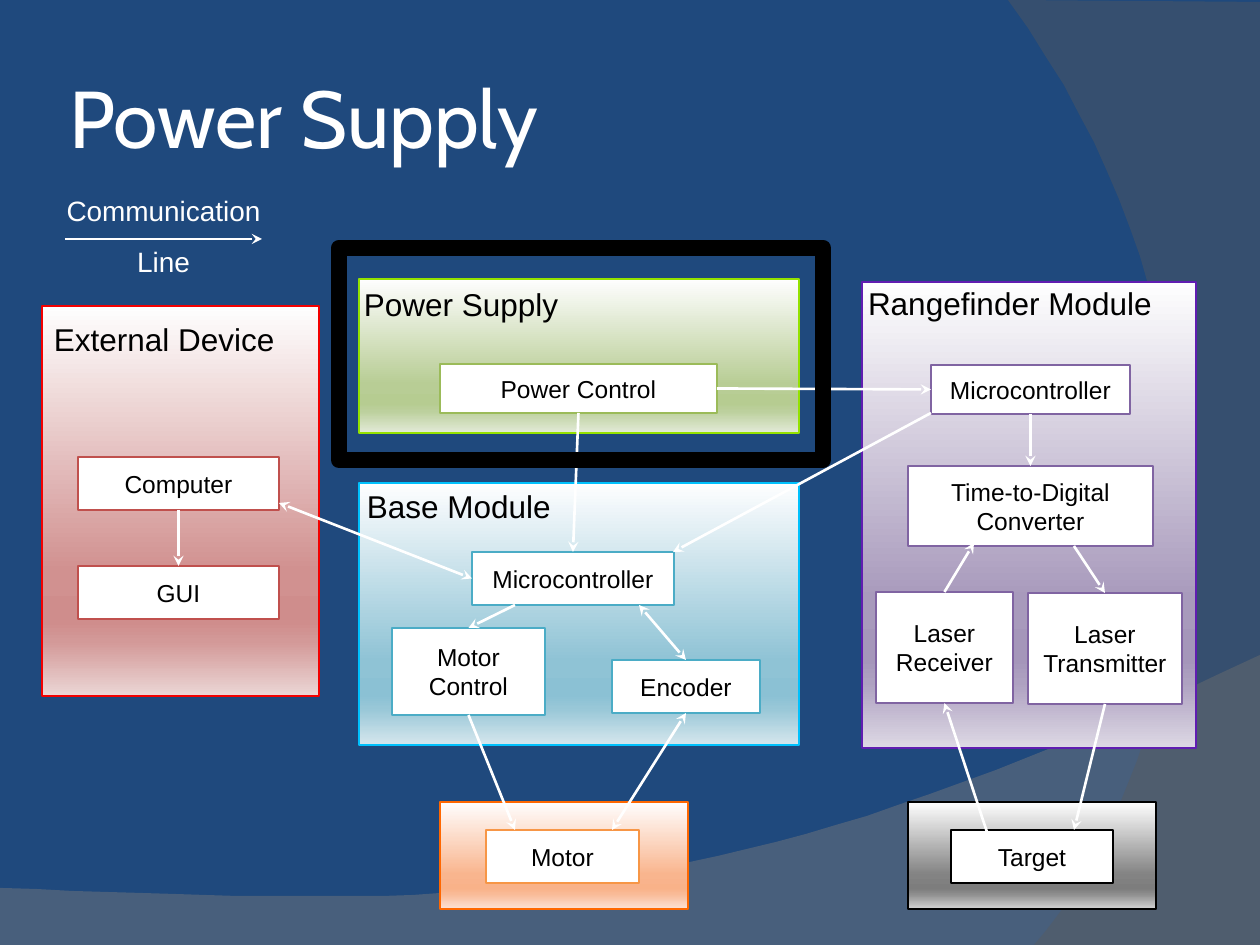
from lxml import etree
from pptx import Presentation
from pptx import util as u
from pptx.dml.color import RGBColor
from pptx.enum import shapes, text
from pptx.oxml import ns

PX = u.Inches(1) / 126
WHITE = RGBColor(0xFF, 0xFF, 0xFF)
BLACK = RGBColor(0x00, 0x00, 0x00)
NAVY = RGBColor(0x1F, 0x49, 0x7D)
LOWER_GRAY = RGBColor(0x7B, 0x7B, 0x7B)
RIGHT_GRAY = RGBColor(0x5A, 0x5A, 0x5A)
PURPLE = RGBColor(0x80, 0x64, 0xA2)
ORANGE = RGBColor(0xF7, 0x96, 0x46)
RED = RGBColor(0xC0, 0x50, 0x4D)
GREEN = RGBColor(0x9B, 0xBB, 0x59)
TEAL = RGBColor(0x4B, 0xAC, 0xC6)
PURPLE_EDGE = RGBColor(0x60, 0x1D, 0xB1)
ORANGE_EDGE = RGBColor(0xFF, 0x67, 0x00)
RED_EDGE = RGBColor(0xF3, 0x00, 0x00)
GREEN_EDGE = RGBColor(0x94, 0xE2, 0x00)
TEAL_EDGE = RGBColor(0x00, 0xC1, 0xFD)

STOPS = (0, 68, 81, 86, 100)
PURPLE_FADE = "FEFEFE A89ABC A596BA AEA1C1 DDD8E4"
ORANGE_FADE = "FFFEFE F9B58E F9B289 F9BA96 FCE1D5"
GRAY_FADE = "FEFEFE 838383 7D7D7D 8D8D8D D2D2D2"
RED_FADE = "FEFEFE D19190 CF8D8C D39998 EBD6D5"
GREEN_FADE = "FEFEFE B8CD95 B6CC91 BCD09D E2EAD7"
TEAL_FADE = "FEFEFF 8FC3D5 8BC1D4 98C7D7 D5E6ED"

PANELS = [
    ("Rangefinder Module", (862, 282, 334, 466), PURPLE_FADE, PURPLE_EDGE, (6, 2)),
    ("", (440, 802, 248, 107), ORANGE_FADE, ORANGE_EDGE, (0, 0)),
    ("", (908, 802, 248, 107), GRAY_FADE, BLACK, (0, 0)),
    ("External Device", (42, 306, 277, 390), RED_FADE, RED_EDGE, (12, 14)),
    ("Power Supply", (359, 279, 440, 154), GREEN_FADE, GREEN_EDGE, (5, 6)),
    ("Base Module", (359, 483, 440, 262), TEAL_FADE, TEAL_EDGE, (8, 4)),
]
BOXES = {
    "computer": ("Computer", (78, 457, 201, 53), RED),
    "gui": ("GUI", (78, 566, 201, 53), RED),
    "power": ("Power Control", (440, 364, 277, 49), GREEN),
    "base": ("Microcontroller", (472, 552, 202, 53), TEAL),
    "control": ("Motor\nControl", (392, 628, 153, 87), TEAL),
    "encoder": ("Encoder", (612, 660, 148, 53), TEAL),
    "motor": ("Motor", (486, 830, 153, 53), ORANGE),
    "ranger": ("Microcontroller", (931, 365, 199, 49), PURPLE),
    "converter": ("Time-to-Digital\nConverter", (908, 466, 245, 80), PURPLE),
    "receiver": ("Laser\nReceiver", (876, 592, 137, 111), PURPLE),
    "transmitter": ("Laser\nTransmitter", (1028, 593, 154, 111), PURPLE),
    "target": ("Target", (951, 830, 162, 53), BLACK),
}
LINKS = [
    ((65, 239), (262, 239), False),
    (("computer", 2), ("gui", 0), False),
    (("power", 2), ("base", 0), False),
    ((515, 605), ("control", 0), False),
    (("control", 2), (515, 830), False),
    (("power", 3), ("ranger", 1), False),
    (("ranger", 2), ("converter", 0), False),
    (("receiver", 0), (974, 543), False),
    ((1074, 546), ("transmitter", 0), False),
    (("transmitter", 2), (1074, 830), False),
    ((987, 832), ("receiver", 2), False),
    ((279, 503), ("base", 1), True),
    ((931, 413), (673, 552), False),
    ((639, 605), ("encoder", 0), True),
    (("encoder", 2), (612, 830), True),
]


def px(*values):
    return [u.Emu(round(value * PX)) for value in values]


def assign(target, **values):
    for name, value in values.items():
        setattr(target, name, value)


def write(box, words, size, color, align, inset=(0, 0), anchor=text.MSO_ANCHOR.MIDDLE, font="Arial"):
    frame = box.text_frame
    left, top = px(*inset)
    assign(frame, text=words, word_wrap=True, vertical_anchor=anchor,
           margin_left=left, margin_right=left, margin_top=top, margin_bottom=top)
    for para in frame.paragraphs:
        para.alignment = align
        for span in para.runs:
            assign(span.font, name=font, size=u.Pt(size))
            span.font.color.rgb = color


def add_rectangle(page, area, edge, width):
    box = page.shapes.add_shape(shapes.MSO_SHAPE.RECTANGLE, *px(*area))
    box.shadow.inherit = False
    box.line.color.rgb = edge
    box.line.width = u.Pt(width)
    return box


def add_panel(page, words, area, fade, edge, inset):
    panel = add_rectangle(page, area, edge, 0.75)
    panel.fill.gradient()
    panel.fill.gradient_angle = 270
    stops = panel.element.spPr.find(".//" + ns.qn("a:gsLst"))
    for stop in list(stops):
        stops.remove(stop)
    for position, color in zip(STOPS, fade.split()):
        stop = etree.SubElement(stops, ns.qn("a:gs"), pos=str(position * 1000))
        etree.SubElement(stop, ns.qn("a:srgbClr"), val=color)
    if words:
        write(panel, words, 18, BLACK, text.PP_ALIGN.LEFT, inset, text.MSO_ANCHOR.TOP)


def add_box(page, words, area, edge):
    box = add_rectangle(page, area, edge, 1.5)
    box.fill.solid()
    box.fill.fore_color.rgb = WHITE
    write(box, words, 14, BLACK, text.PP_ALIGN.CENTER)
    return box


def add_link(page, boxes, start, end, both):
    points = [(0, 0) if isinstance(side[0], str) else side for side in (start, end)]
    link = page.shapes.add_connector(shapes.MSO_CONNECTOR.STRAIGHT, *px(*points[0], *points[1]))
    for side, connect in ((start, link.begin_connect), (end, link.end_connect)):
        if isinstance(side[0], str):
            connect(boxes[side[0]], side[1])
    link.line.color.rgb = WHITE
    link.line.width = u.Pt(1.5)
    properties = link.element.spPr
    stroke = properties.find(ns.qn("a:ln"))
    for tag in ["a:headEnd"] * both + ["a:tailEnd"]:
        etree.SubElement(stroke, ns.qn(tag), type="stealth")
    etree.SubElement(properties, ns.qn("a:effectLst"))


def curve(points, steps=40):
    result = []
    for step in range(steps + 1):
        t = step / steps
        weights = ((1 - t) ** 3, 3 * t * (1 - t) ** 2, 3 * t * t * (1 - t), t ** 3)
        result.append(tuple(sum(w * point[axis] for w, point in zip(weights, points))
                            for axis in (0, 1)))
    return result


def add_swoosh(page, corners, bend, color, opacity):
    outline = corners + curve(bend)
    builder = page.shapes.build_freeform(*outline[0], scale=PX)
    builder.add_line_segments(outline[1:], close=True)
    swoosh = builder.convert_to_shape()
    swoosh.shadow.inherit = False
    swoosh.line.fill.background()
    swoosh.fill.solid()
    swoosh.fill.fore_color.rgb = color
    shade = swoosh.element.spPr.find(".//" + ns.qn("a:srgbClr"))
    etree.SubElement(shade, ns.qn("a:alpha"), val=str(opacity * 1000))


def add_legend(page):
    legend = page.shapes.add_textbox(*px(48, 171, 231, 112))
    write(legend, "Communication Line", 16, WHITE, text.PP_ALIGN.CENTER, (12, 6), text.MSO_ANCHOR.TOP)
    legend.text_frame.paragraphs[0].line_spacing = 1.5


def add_title(page):
    title = page.shapes.title
    assign(title, **dict(zip(("left", "top", "width", "height"), px(63, 38, 1029, 157))))
    write(title, "Power Supply", 46, WHITE, text.PP_ALIGN.LEFT, (6, 6), font="Cabin")


def main():
    deck = Presentation()
    assign(deck, **dict(zip(("slide_width", "slide_height"), px(1260, 945))))
    page = deck.slides.add_slide(deck.slide_layouts[5])
    page.background.fill.solid()
    page.background.fill.fore_color.rgb = NAVY
    add_swoosh(page, [(0, 945), (1260, 945)],
               [(1260, 655), (704, 919), (493, 906), (0, 888)], LOWER_GRAY, 45)
    add_swoosh(page, [(1260, 2), (1260, 945)],
               [(1034, 945), (1178, 780), (1283, 378), (1008, 0)], RIGHT_GRAY, 40)
    add_title(page)
    for panel in PANELS:
        add_panel(page, *panel)
    boxes = {key: add_box(page, *box) for key, box in BOXES.items()}
    add_legend(page)
    for link in LINKS:
        add_link(page, boxes, *link)
    frame = add_rectangle(page, (339, 248, 484, 212), BLACK, 9.25)
    frame.fill.background()
    deck.save("out.pptx")


if __name__ == "__main__":
    main()
